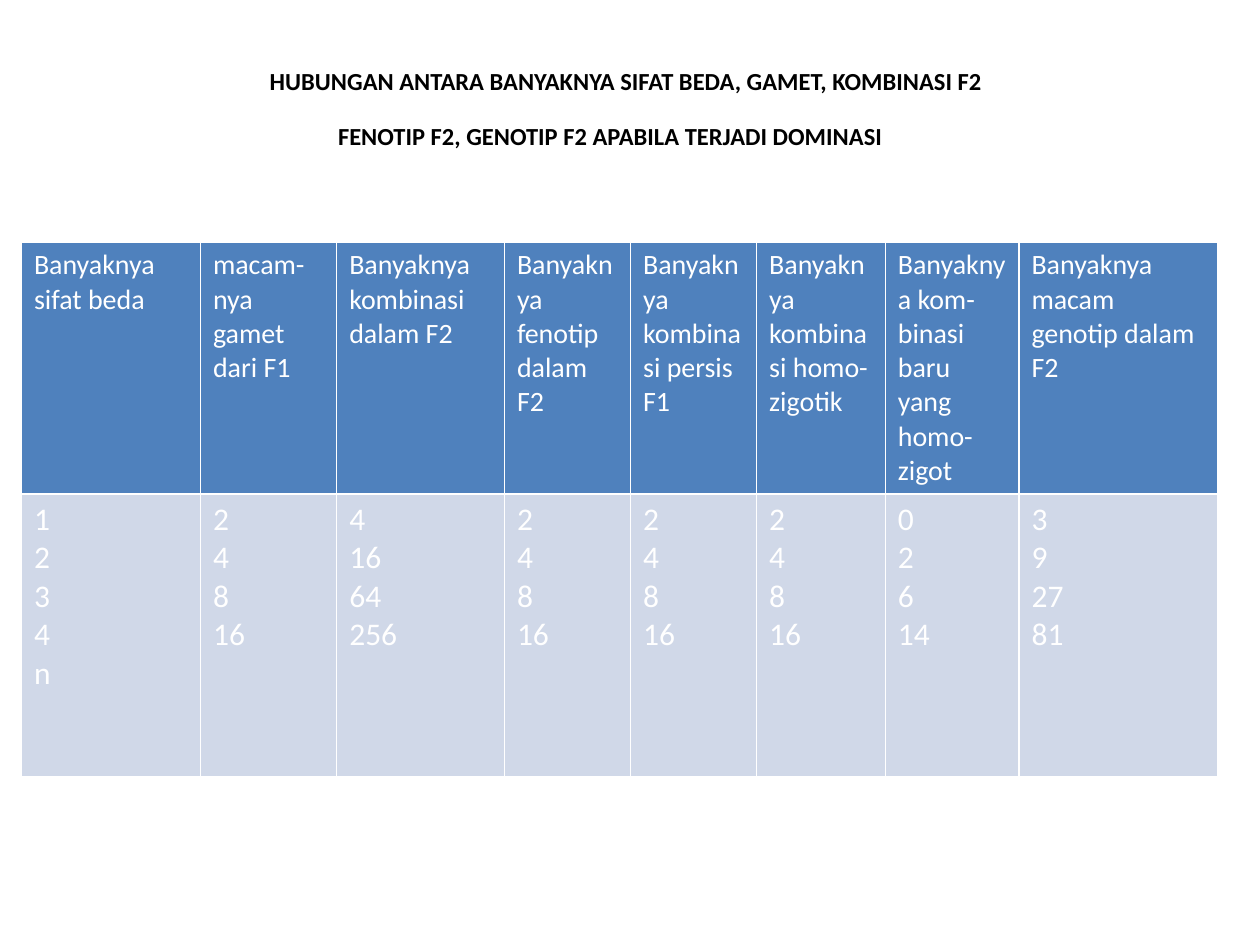
import pptx
import pptx.dml.color
import pptx.enum.text
import pptx.oxml
import pptx.oxml.ns
import pptx.util

WHITE = pptx.dml.color.RGBColor(0xFF, 0xFF, 0xFF)
BLACK = pptx.dml.color.RGBColor(0, 0, 0)
HEADER_BLUE = pptx.dml.color.RGBColor(0x4F, 0x81, 0xBD)
BODY_BLUE = pptx.dml.color.RGBColor(0xD0, 0xD8, 0xE8)

COLUMNS = [
    (1.42, "Banyaknya sifat beda", "1 2 3 4 n"),
    (1.08, "macam-nya gamet dari F1", "2 4 8 16"),
    (1.33, "Banyaknya kombinasi dalam F2", "4 16 64 256"),
    (1, "Banyaknya fenotip dalam F2", "2 4 8 16"),
    (1, "Banyaknya kombinasi persis F1", "2 4 8 16"),
    (1.02, "Banyaknya kombinasi homo-zigotik", "2 4 8 16"),
    (1.06, "Banyaknya kom-binasi baru yang homo-zigot", "0 2 6 14"),
    (1.58, "Banyaknya macam genotip dalam F2", "3 9 27 81"),
]


class SlideBuilder:
    """Hold the font, the slide and its size, and place elements by shares of that size."""

    def __init__(self, presentation, font_name="Calibri"):
        self.width = presentation.slide_width
        self.height = presentation.slide_height
        self.font_name = font_name
        self.slide = presentation.slides.add_slide(presentation.slide_layouts[6])

    def box(self, left, top, width, height):
        return (int(left * self.width), int(top * self.height),
                int(width * self.width), int(height * self.height))

    def style(self, paragraph, size, color, bold=False):
        font = paragraph.font
        font.name = self.font_name
        font.size = pptx.util.Pt(size)
        font.bold = bold
        font.color.rgb = color

    def title(self, text, left, top, width, height):
        shape = self.slide.shapes.add_textbox(*self.box(left, top, width, height))
        frame = shape.text_frame
        frame.word_wrap = True
        frame.vertical_anchor = pptx.enum.text.MSO_ANCHOR.BOTTOM
        frame.margin_right = pptx.util.Inches(0.16)
        paragraph = frame.paragraphs[0]
        paragraph.text = text
        paragraph.alignment = pptx.enum.text.PP_ALIGN.CENTER
        self.style(paragraph, 14, BLACK, bold=True)

    def cell(self, cell, text, size, fill):
        properties = cell._tc.get_or_add_tcPr()
        for side in "LRTB":
            properties.append(pptx.oxml.parse_xml(
                f'<a:ln{side} {pptx.oxml.ns.nsdecls("a")} w="12700"><a:solidFill>'
                f'<a:srgbClr val="{WHITE}"/></a:solidFill></a:ln{side}>'))
        cell.fill.solid()
        cell.fill.fore_color.rgb = fill
        cell.text = text
        for paragraph in cell.text_frame.paragraphs:
            self.style(paragraph, size, WHITE)

    def table(self, columns, left, top, width, row_heights):
        frame = self.slide.shapes.add_table(
            len(row_heights), len(columns), *self.box(left, top, width, sum(row_heights)))
        table = frame.table
        for row, height in zip(table.rows, row_heights):
            row.height = int(height * self.height)
        total = sum(weight for weight, _, _ in columns)
        for index, (weight, heading, values) in enumerate(columns):
            table.columns[index].width = int(width * self.width * weight / total)
            self.cell(table.cell(0, index), heading, 16, HEADER_BLUE)
            self.cell(table.cell(1, index), "\n".join(values.split()), 18, BODY_BLUE)


def main():
    presentation = pptx.Presentation()
    presentation.slide_width = pptx.util.Inches(10)
    presentation.slide_height = pptx.util.Inches(7.5)
    builder = SlideBuilder(presentation)
    builder.table(COLUMNS, 0.017, 1.92 / 7.5, 0.95, [2 / 7.5, 2.24 / 7.5])
    builder.title("HUBUNGAN ANTARA BANYAKNYA SIFAT BEDA, GAMET, KOMBINASI F2",
                  0, 0, 1, 0.81 / 7.5)
    builder.title("FENOTIP F2, GENOTIP F2 APABILA TERJADI DOMINASI",
                  0.075, 0.1, 0.825, 0.49 / 7.5)
    presentation.save("out.pptx")


if __name__ == "__main__":
    main()
